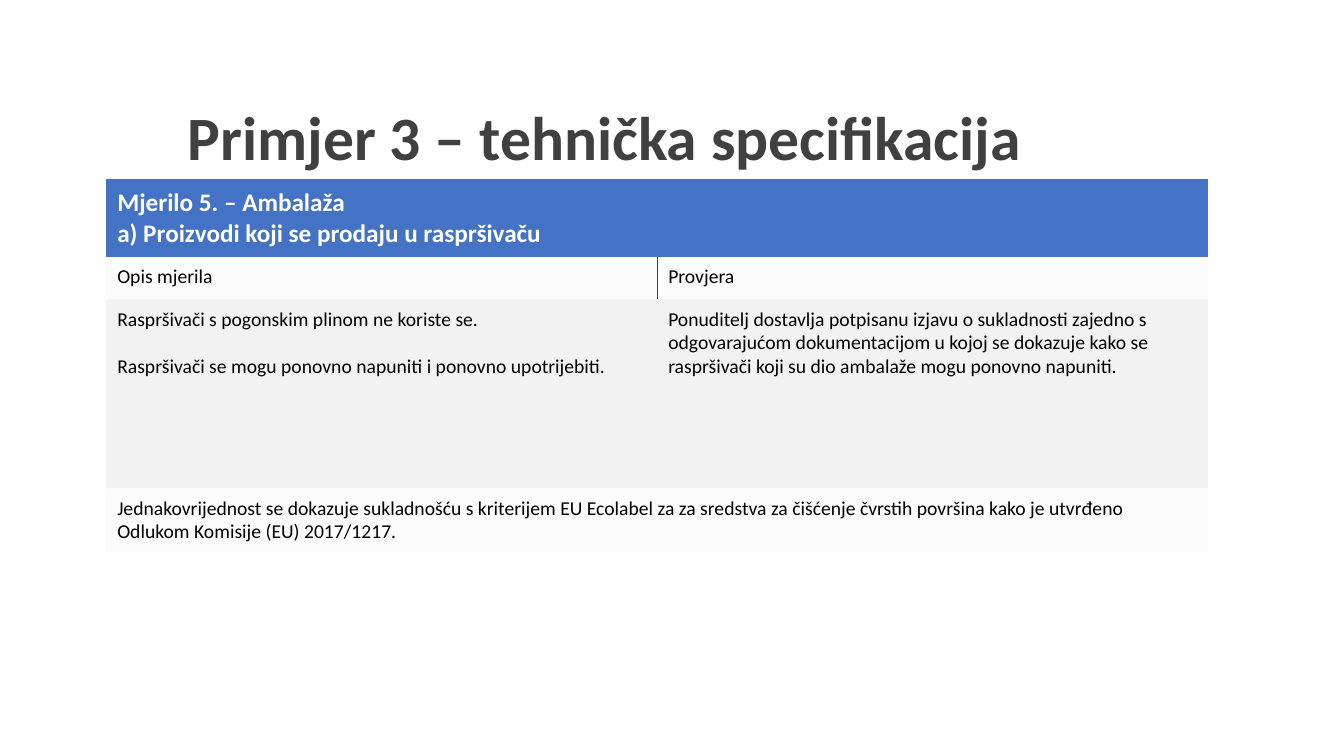
from dataclasses import dataclass, field
from typing import Any, Optional

from lxml.etree import SubElement
from pptx import Presentation
from pptx.dml.color import RGBColor
from pptx.enum.text import MSO_ANCHOR, MSO_AUTO_SIZE, PP_ALIGN
from pptx.oxml import parse_xml
from pptx.oxml.ns import nsdecls, qn
from pptx.util import Inches, Pt

SLIDE_WIDTH = Inches(13.33)
SLIDE_HEIGHT = Inches(7.5)
NO_STYLE_TABLE = "{2D5ABB26-0587-4C30-8999-92F81FD0307C}"


@dataclass(frozen=True)
class Theme:
    font: str = "Calibri"
    dark: str = "404040"
    black: str = "000000"
    white: str = "FFFFFF"
    blue: str = "4472C4"
    gray: str = "F2F2F2"
    title_size: int = 44
    heading_size: int = 18
    body_size: int = 14


THEME = Theme()


@dataclass(frozen=True)
class TextStyle:
    size: int
    color: str
    bold: bool = False


@dataclass(frozen=True)
class TableCell:
    row: int
    column: int
    lines: tuple[str, ...]
    fill: str = THEME.gray
    opacity: int = 100
    span: int = 1
    border: Optional[str] = None
    style: TextStyle = TextStyle(THEME.body_size, THEME.black)
    cell_format: dict[str, Any] = field(default_factory=dict)
    paragraph_format: dict[str, Any] = field(default_factory=dict)
    gap: int = 0


TITLE_STYLE = TextStyle(THEME.title_size, THEME.dark, True)
HEADING_STYLE = TextStyle(THEME.heading_size, THEME.white, True)
COLUMN_SHARES = (41, 41)
ROW_SHARES = (10.3, 5.6, 25, 8.4)
CELLS = (
    TableCell(0, 0, ("Mjerilo 5. – Ambalaža", "a) Proizvodi koji se prodaju u raspršivaču"),
              fill=THEME.blue, span=2, style=HEADING_STYLE,
              cell_format={"vertical_anchor": MSO_ANCHOR.MIDDLE}),
    TableCell(1, 0, ("Opis mjerila",), opacity=30, border="lnR"),
    TableCell(1, 1, ("Provjera",), opacity=30, border="lnL"),
    TableCell(2, 0, ("Raspršivači s pogonskim plinom ne koriste se.",
                     "Raspršivači se mogu ponovno napuniti i ponovno upotrijebiti."),
              paragraph_format={"alignment": PP_ALIGN.JUSTIFY}, gap=17),
    TableCell(2, 1, ("Ponuditelj dostavlja potpisanu izjavu o sukladnosti zajedno s "
                     "odgovarajućom dokumentacijom u kojoj se dokazuje kako se "
                     "raspršivači koji su dio ambalaže mogu ponovno napuniti.",)),
    TableCell(3, 0, ("Jednakovrijednost se dokazuje sukladnošću s kriterijem EU Ecolabel "
                     "za za sredstva za čišćenje čvrstih površina kako je utvrđeno "
                     "Odlukom Komisije (EU) 2017/1217.",), opacity=30, span=2),
)


def across(percent: float) -> int:
    return round(SLIDE_WIDTH * percent / 100)


def down(percent: float) -> int:
    return round(SLIDE_HEIGHT * percent / 100)


def apply_format(target: Any, values: dict[str, Any]) -> None:
    for name, value in values.items():
        setattr(target, name, value)


def write_paragraph(paragraph: Any, text: str, style: TextStyle, values: dict[str, Any]) -> None:
    apply_format(paragraph, values)
    run = paragraph.add_run()
    run.text = text
    apply_format(run.font, {"name": THEME.font, "size": Pt(style.size), "bold": style.bold})
    run.font.color.rgb = RGBColor.from_string(style.color)


def add_title(slide: Any, text: str) -> None:
    title = slide.shapes.title
    apply_format(title, {"left": across(13.2), "top": down(11.3),
                         "width": across(78.2), "height": down(14.5)})
    apply_format(title.text_frame, {"vertical_anchor": MSO_ANCHOR.MIDDLE, "word_wrap": True,
                                    "auto_size": MSO_AUTO_SIZE.NONE})
    write_paragraph(title.text_frame.paragraphs[0], text, TITLE_STYLE,
                    {"alignment": PP_ALIGN.LEFT, "line_spacing": 0.9})


def fill_cell(cell: Any, content: TableCell) -> None:
    cell.fill.solid()
    cell.fill.fore_color.rgb = RGBColor.from_string(content.fill)
    properties = cell._tc.get_or_add_tcPr()
    if content.opacity < 100:
        color = properties.find(f"{qn('a:solidFill')}/{qn('a:srgbClr')}")
        SubElement(color, qn("a:alpha"), val=str(content.opacity * 1000))
    if content.border:
        properties.insert(0, parse_xml(
            f'<a:{content.border} {nsdecls("a")} w="{Pt(0.5)}"><a:solidFill>'
            f'<a:srgbClr val="{THEME.dark}"/></a:solidFill></a:{content.border}>'))


def draw_cell(table: Any, content: TableCell) -> None:
    cell = table.cell(content.row, content.column)
    if content.span > 1:
        cell.merge(table.cell(content.row, content.column + content.span - 1))
    margins = {"margin_left": Inches(0.11), "margin_right": Inches(0.08),
               "margin_top": Inches(0.08), "margin_bottom": Inches(0.08)}
    apply_format(cell, margins | content.cell_format)
    fill_cell(cell, content)
    for index, line in enumerate(content.lines):
        frame = cell.text_frame
        paragraph = frame.add_paragraph() if index else frame.paragraphs[0]
        spacing = {"space_before": Pt(content.gap)} if index else {}
        write_paragraph(paragraph, line, content.style, content.paragraph_format | spacing)


def add_criteria_table(slide: Any) -> None:
    table = slide.shapes.add_table(
        len(ROW_SHARES), len(COLUMN_SHARES), across(7.9), down(23.7),
        across(sum(COLUMN_SHARES)), down(sum(ROW_SHARES))).table
    apply_format(table, {"first_row": False, "horz_banding": False})
    table._tbl.tblPr.find(qn("a:tableStyleId")).text = NO_STYLE_TABLE
    for column, share in zip(table.columns, COLUMN_SHARES):
        column.width = across(share)
    for row, share in zip(table.rows, ROW_SHARES):
        row.height = down(share)
    for content in CELLS:
        draw_cell(table, content)


def main() -> None:
    presentation = Presentation()
    apply_format(presentation, {"slide_width": SLIDE_WIDTH, "slide_height": SLIDE_HEIGHT})
    slide = presentation.slides.add_slide(presentation.slide_layouts.get_by_name("Title Only"))
    add_title(slide, "Primjer 3 – tehnička specifikacija")
    add_criteria_table(slide)
    presentation.save("out.pptx")


if __name__ == "__main__":
    main()
